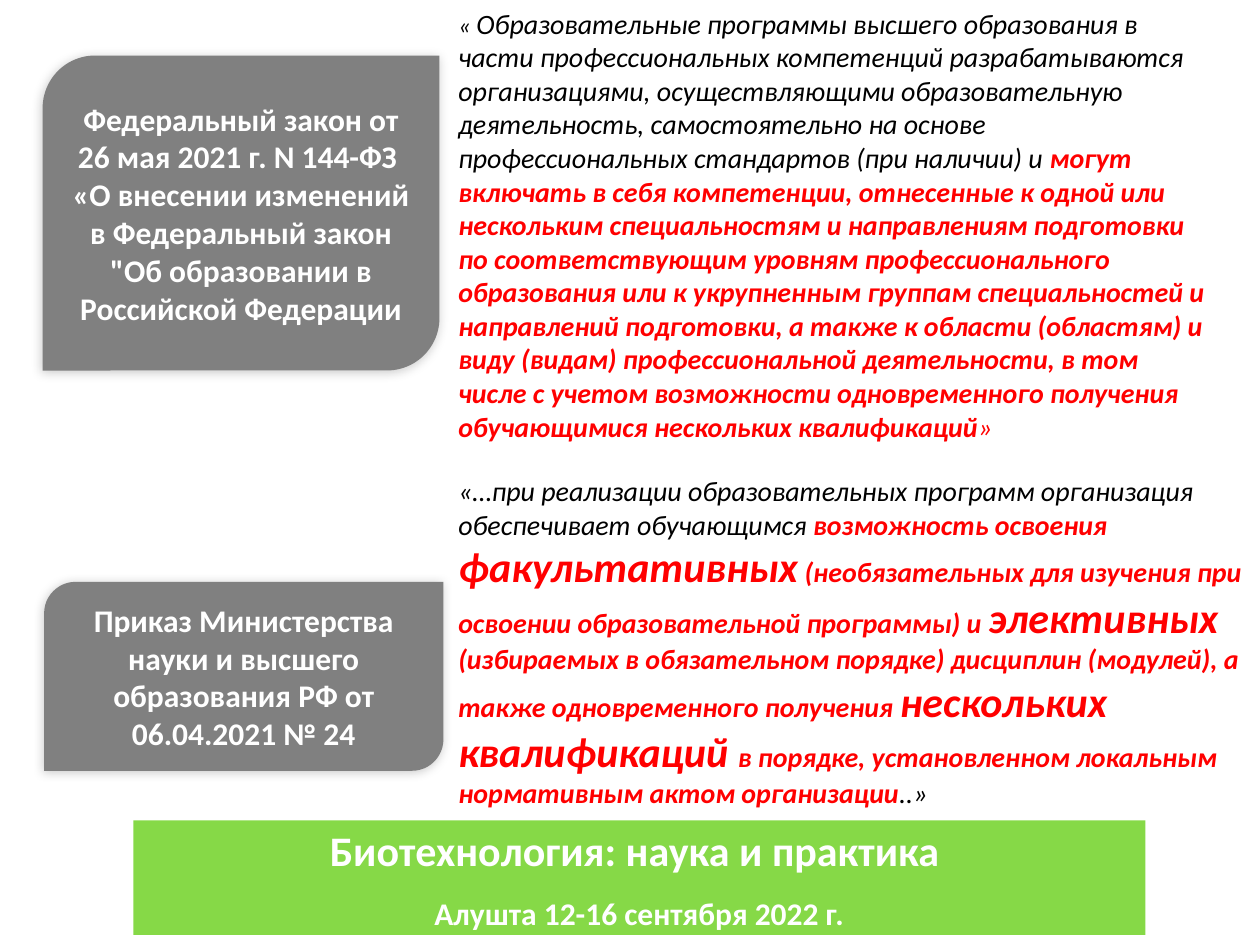
import lxml.etree
import pptx
import pptx.dml.color
import pptx.enum.shapes
import pptx.enum.text
import pptx.oxml.ns
import pptx.util

Cm = pptx.util.Cm
Pt = pptx.util.Pt
RGBColor = pptx.dml.color.RGBColor
Shape = pptx.enum.shapes.MSO_SHAPE
Align = pptx.enum.text.PP_ALIGN
qn = pptx.oxml.ns.qn

WHITE = RGBColor(0xFF, 0xFF, 0xFF)
BLACK = RGBColor(0x00, 0x00, 0x00)
RED = RGBColor(0xFF, 0x00, 0x00)
GRAY = RGBColor(0x80, 0x80, 0x80)
GREEN = RGBColor(0x86, 0xD9, 0x47)


def add_run(paragraph, text, size, color, **formats):
    run = paragraph.add_run()
    run.text = text
    run.font.color.rgb = color
    values = {"name": "Calibri", "size": Pt(size), **formats}
    for attribute, value in values.items():
        setattr(run.font, attribute, value)


def add_panel(preset, box, color, lines):
    panel = slide.shapes.add_shape(preset, *map(Cm, box))
    panel.shadow.inherit = False
    panel.fill.solid()
    panel.fill.fore_color.rgb = color
    panel.line.fill.background()
    frame = panel.text_frame
    frame.word_wrap = True
    frame.vertical_anchor = pptx.enum.text.MSO_ANCHOR.MIDDLE
    for index, (text, size, spacing) in enumerate(lines):
        paragraph = frame.add_paragraph() if index else frame.paragraphs[0]
        paragraph.alignment = Align.CENTER
        paragraph.line_spacing = spacing
        add_run(paragraph, text, size, WHITE, bold=True)
    return panel


presentation = pptx.Presentation()
presentation.slide_width = Cm(25.4)
presentation.slide_height = Cm(19.05)
slide = presentation.slides.add_slide(presentation.slide_layouts[6])

add_panel(Shape.RECTANGLE, (2.69, 16.54, 20.4, 2.31), GREEN, [
    ("Биотехнология: наука и практика ", 24, None),
    ("Алушта 12-16 сентября 2022 г.", 18, 1.5),
])

documents = [
    ((0.86, 1.12, 8, 6.35), [
        "Федеральный закон от 26 мая 2021 г. N 144-ФЗ ",
        "«О внесении изменений в Федеральный закон \"Об образовании в Российской Федерации",
    ]),
    ((0.89, 11.73, 8.05, 3.81), [
        "Приказ Министерства науки и высшего образования РФ от 06.04.2021 № 24",
    ]),
]
for box, lines in documents:
    document = add_panel(Shape.ROUND_2_DIAG_RECTANGLE, box, GRAY,
                         [(line, 18, None) for line in lines])
    effects = document._element.spPr.find(qn("a:effectLst"))
    shadow = lxml.etree.SubElement(
        effects, qn("a:outerShdw"), blurRad=str(Pt(6)), dist=str(Pt(1)),
        dir=str(135 * 60000), algn="tl", rotWithShape="0")
    shade = lxml.etree.SubElement(shadow, qn("a:srgbClr"), val=str(BLACK))
    lxml.etree.SubElement(shade, qn("a:alpha"), val="20000")

quotations = [
    ((8.99, 0, 15.7, 9.14), [
        ("« ", 14, BLACK, False),
        ("Образовательные программы высшего образования в части профессиональных "
         "компетенций разрабатываются организациями, осуществляющими образовательную "
         "деятельность, самостоятельно на основе профессиональных стандартов "
         "(при наличии) и ", 16, BLACK, False),
        ("могут включать в себя компетенции, отнесенные к одной или нескольким "
         "специальностям и направлениям подготовки по соответствующим уровням "
         "профессионального образования или к укрупненным группам специальностей и "
         "направлений подготовки, а также к области (областям) и виду (видам) "
         "профессиональной деятельности, в том числе с учетом возможности "
         "одновременного получения обучающимися нескольких квалификаций",
         16, RED, True),
        ("»", 16, RED, False),
    ]),
    ((8.99, 9.42, 16.61, 7.09), [
        ("«…при реализации образовательных программ организация обеспечивает "
         "обучающимся ", 16, BLACK, False),
        ("возможность освоения ", 16, RED, True),
        ("факультативных", 24, RED, True),
        (" (необязательных для изучения при освоении образовательной программы) и ",
         16, RED, True),
        ("элективных", 24, RED, True),
        (" (избираемых в обязательном порядке) дисциплин (модулей), а также "
         "одновременного получения ", 16, RED, True),
        ("нескольких квалификаций ", 24, RED, True),
        ("в порядке, установленном локальным нормативным актом организации",
         16, RED, True),
        ("..»", 16, BLACK, False),
    ]),
]
for box, passages in quotations:
    frame = slide.shapes.add_textbox(*map(Cm, box)).text_frame
    frame.word_wrap = True
    frame.auto_size = pptx.enum.text.MSO_AUTO_SIZE.SHAPE_TO_FIT_TEXT
    for text, size, color, bold in passages:
        add_run(frame.paragraphs[0], text, size, color, bold=bold, italic=True)

presentation.save("out.pptx")
